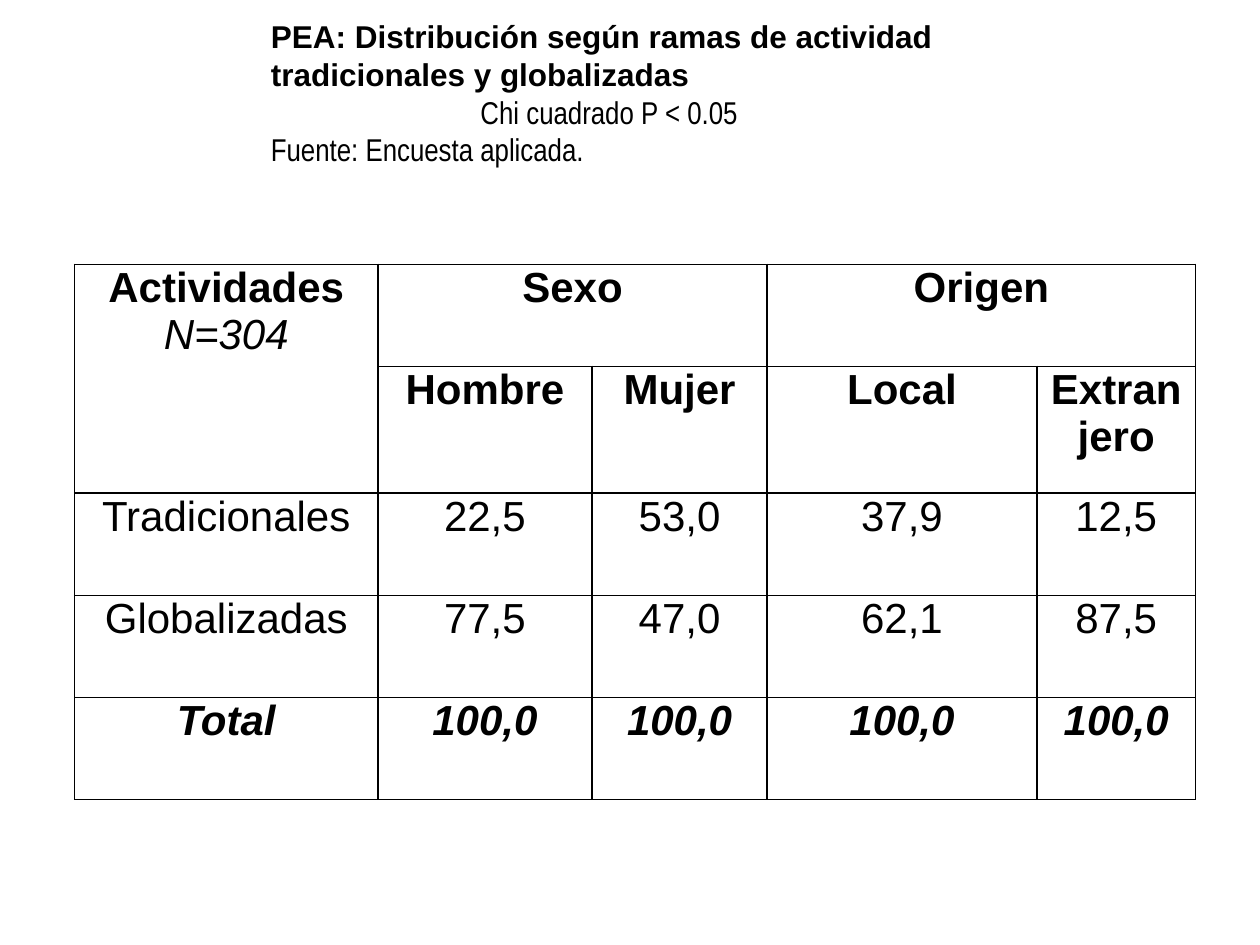
import lxml.etree
import pptx
import pptx.dml.color
import pptx.enum.text
import pptx.oxml.ns
import pptx.util

Pt = pptx.util.Pt
ALIGN = pptx.enum.text.PP_ALIGN
ANCHOR = pptx.enum.text.MSO_ANCHOR
COLORS = {"text": "000000", "border": "000000", "cell": "FFFFFF"}


def format_paragraph(paragraph, size, align, font="Arial", bold=False, italic=False):
    paragraph.alignment = align
    paragraph.font.name = font
    paragraph.font.size = Pt(size)
    paragraph.font.bold = bold
    paragraph.font.italic = italic
    paragraph.font.color.rgb = pptx.dml.color.RGBColor.from_string(COLORS["text"])


def add_borders(cell, width):
    properties = cell._tc.get_or_add_tcPr()
    for position, side in enumerate(("lnL", "lnR", "lnT", "lnB")):
        line = lxml.etree.Element(pptx.oxml.ns.qn(f"a:{side}"), w=str(Pt(width)))
        fill = lxml.etree.SubElement(line, pptx.oxml.ns.qn("a:solidFill"))
        lxml.etree.SubElement(fill, pptx.oxml.ns.qn("a:srgbClr"), val=COLORS["border"])
        properties.insert(position, line)


presentation = pptx.Presentation()
presentation.slide_width = Pt(720)
presentation.slide_height = Pt(540)
slide = presentation.slides.add_slide(presentation.slide_layouts[5])

# Title with test result and source
title = slide.shapes.title
title.left, title.top, title.width, title.height = Pt(147.6), Pt(5.8), Pt(401), Pt(94.3)
title_frame = title.text_frame
title_frame.word_wrap = True
title_frame.auto_size = pptx.enum.text.MSO_AUTO_SIZE.NONE
title_frame.vertical_anchor = ANCHOR.MIDDLE
title_lines = [
    ("PEA: Distribución según ramas de actividad ", "Arial", True, ALIGN.JUSTIFY),
    ("tradicionales y globalizadas", "Arial", True, ALIGN.JUSTIFY),
    ("Chi cuadrado P < 0.05", "Arial Narrow", False, ALIGN.CENTER),
    ("Fuente: Encuesta aplicada.", "Arial Narrow", False, ALIGN.JUSTIFY),
]
title_frame.text = "\n".join(line[0] for line in title_lines)
for paragraph, (_, font, bold, align) in zip(title_frame.paragraphs, title_lines):
    format_paragraph(paragraph, 18, align, font, bold)

# Activity table
rows = [
    ["Actividades\nN=304", "Sexo", "", "Origen", ""],
    ["", "Hombre", "Mujer", "Local", "Extranjero"],
    ["Tradicionales", "22,5", "53,0", "37,9", "12,5"],
    ["Globalizadas", "77,5", "47,0", "62,1", "87,5"],
    ["Total", "100,0", "100,0", "100,0", "100,0"],
]
column_widths = [173.2, 122.4, 100.1, 154.1, 90.8]
row_heights = [58.4, 72.4, 58.4, 58.4, 58.4]
table = slide.shapes.add_table(
    len(rows), len(column_widths), Pt(42.7), Pt(151),
    Pt(sum(column_widths)), Pt(sum(row_heights)),
).table
table.first_row = False
table.horz_banding = False
for column, width in zip(table.columns, column_widths):
    column.width = Pt(width)
for row, height in zip(table.rows, row_heights):
    row.height = Pt(height)

# Cell text, fill and borders
last_row = len(rows) - 1
for row_index, texts in enumerate(rows):
    for column_index, text in enumerate(texts):
        cell = table.cell(row_index, column_index)
        cell.text = text
        cell.margin_left = cell.margin_right = Pt(5)
        cell.margin_top = cell.margin_bottom = 0
        cell.vertical_anchor = ANCHOR.TOP
        cell.fill.solid()
        cell.fill.fore_color.rgb = pptx.dml.color.RGBColor.from_string(COLORS["cell"])
        add_borders(cell, 1)
        for paragraph in cell.text_frame.paragraphs:
            is_sample_size = paragraph.text.startswith("N=")
            is_bold = row_index in (0, 1, last_row) and not is_sample_size
            is_italic = row_index == last_row or is_sample_size
            format_paragraph(paragraph, 24, ALIGN.CENTER, bold=is_bold, italic=is_italic)

# Merged headings
for first, last in [((0, 0), (1, 0)), ((0, 1), (0, 2)), ((0, 3), (0, 4))]:
    table.cell(*first).merge(table.cell(*last))

presentation.save("out.pptx")
